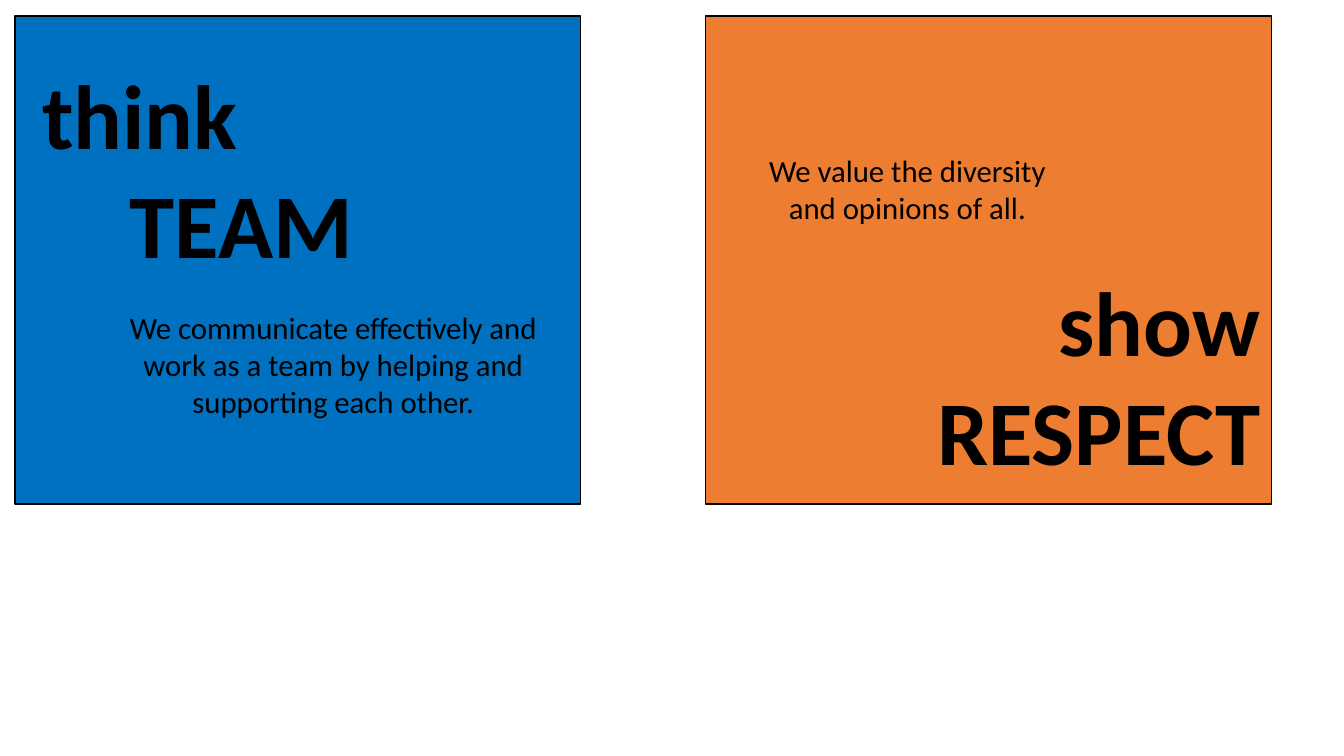
"""Build a slide with two value cards: think TEAM and show RESPECT."""
from dataclasses import dataclass

from pptx import Presentation
from pptx.dml.color import RGBColor
from pptx.enum.shapes import MSO_SHAPE as Shape
from pptx.enum.text import MSO_AUTO_SIZE as AutoSize, PP_ALIGN as Align
from pptx.util import Inches, Pt


@dataclass(frozen=True)
class Theme:
    font: str = "Calibri"
    ink: RGBColor = RGBColor(0x00, 0x00, 0x00)
    blue: RGBColor = RGBColor(0x00, 0x70, 0xC0)
    orange: RGBColor = RGBColor(0xED, 0x7D, 0x31)
    title: Pt = Pt(65)
    body: Pt = Pt(22)
    outline: Pt = Pt(1)


theme = Theme()


def add_card(page, left, color):
    card = page.shapes.add_shape(
        Shape.RECTANGLE, Inches(left), Inches(0.16), Inches(5.61), Inches(4.84))
    card.shadow.inherit = False
    card.fill.solid()
    card.fill.fore_color.rgb = color
    card.line.color.rgb = theme.ink
    card.line.width = theme.outline


def add_text(page, place, lines, size, align, bold=False):
    box = page.shapes.add_textbox(*[Inches(length) for length in place])
    frame = box.text_frame
    frame.word_wrap = True
    frame.auto_size = AutoSize.SHAPE_TO_FIT_TEXT
    for number, (words, indent) in enumerate(lines):
        para = frame.add_paragraph() if number else frame.paragraphs[0]
        para.alignment = align
        if indent:
            para._p.get_or_add_pPr().set("marL", str(Inches(indent)))
        span = para.add_run()
        span.text = words
        span.font.name = theme.font
        span.font.size = size
        span.font.bold = bold
        span.font.color.rgb = theme.ink


deck = Presentation()
deck.slide_width = Inches(13.33)
deck.slide_height = Inches(7.5)
page = deck.slides.add_slide(deck.slide_layouts[6])

add_card(page, 0.15, theme.blue)
add_text(page, (0.32, 0.53, 3.43, 2.29), [("think", 0), ("TEAM", 0.87)],
         theme.title, Align.LEFT, bold=True)
add_text(page, (0.86, 3.01, 4.89, 1.21),
         [("We communicate effectively and work as a team by helping and "
           "supporting each other.", 0)], theme.body, Align.CENTER)

add_card(page, 7, theme.orange)
add_text(page, (9.11, 2.58, 3.49, 2.29), [("show", 0), ("RESPECT", 0)],
         theme.title, Align.RIGHT, bold=True)
add_text(page, (7.3, 1.46, 3.4, 0.84),
         [("We value the diversity and opinions of all.", 0)],
         theme.body, Align.CENTER)

deck.save("out.pptx")
